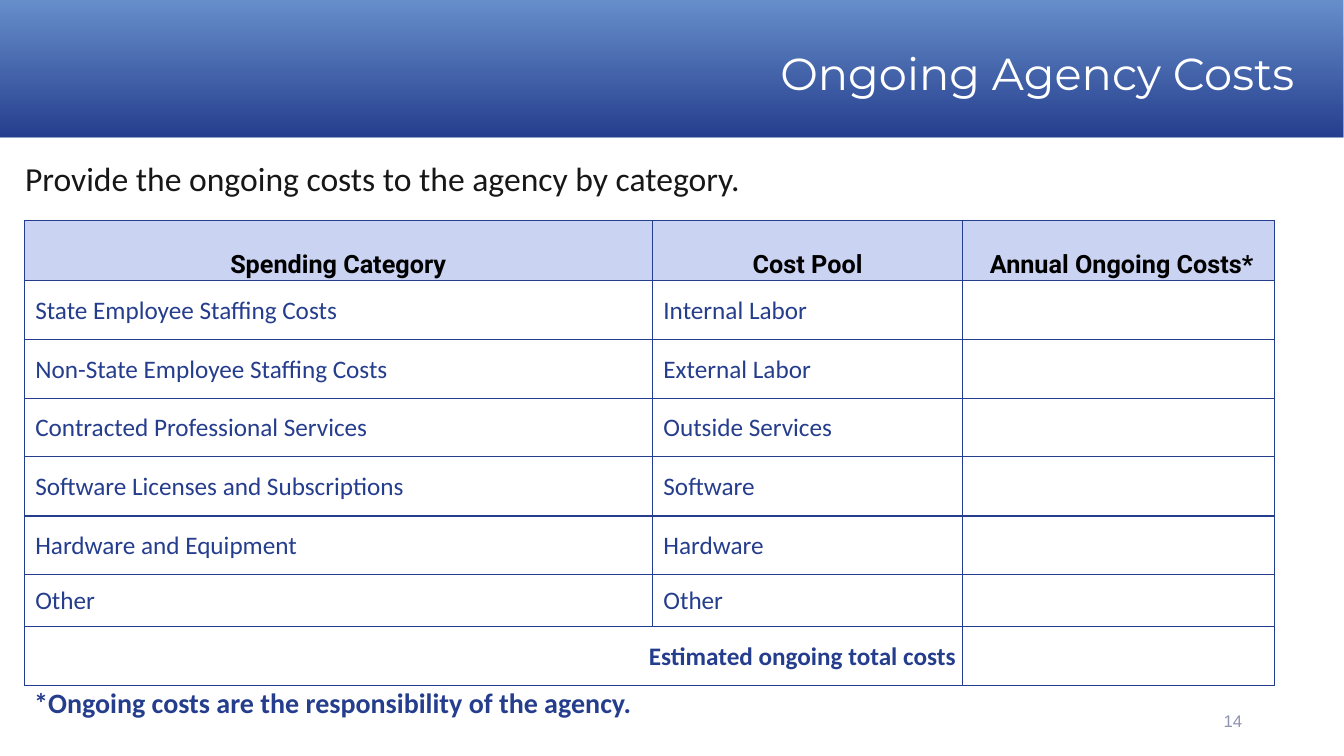
"""Build the Ongoing Agency Costs slide."""
from dataclasses import dataclass

from lxml.etree import SubElement
from pptx import Presentation
from pptx.dml.color import RGBColor as RGB
from pptx.enum.shapes import MSO_SHAPE as SHAPE
from pptx.enum.text import MSO_ANCHOR as ANCHOR, PP_ALIGN as ALIGN
from pptx.oxml.ns import qn
from pptx.slide import Slide
from pptx.table import _Cell as Cell
from pptx.text.text import TextFrame
from pptx.util import Inches, Pt

COLORS = {"sky": "6790CB", "white": "FFFFFF", "navy": "253D8D", "header": "CAD3F1",
          "black": "000000", "ink": "181717", "number": "8E92B3"}
BANNER_STOPS = [(0, "sky", 100), (100, "navy", 100), (100, "navy", 0)]
COL_WIDTHS = [6.23, 3.08, 3.09]
ROW_HEIGHTS = [0.59, 0.59, 0.58, 0.58, 0.59, 0.58, 0.52, 0.58]
HEADERS = ["Spending Category", "Cost Pool", "Annual Ongoing Costs*"]
CATEGORIES = [
    ("State Employee Staffing Costs", "Internal Labor"),
    ("Non-State Employee Staffing Costs", "External Labor"),
    ("Contracted Professional Services", "Outside Services"),
    ("Software Licenses and Subscriptions", "Software"),
    ("Hardware and Equipment", "Hardware"),
    ("Other", "Other"),
]


@dataclass(frozen=True)
class Style:
    font: str
    size: float
    color: str
    bold: bool = False
    align: ALIGN = ALIGN.LEFT
    spacing: float = 1.0


@dataclass(frozen=True)
class Label:
    text: str
    box: tuple[float, float, float, float]
    style: Style
    anchor: ANCHOR = ANCHOR.TOP


HEADER = Style("Roboto", 18, "black", True, ALIGN.CENTER)
BODY = Style("Calibri", 18, "navy")
TOTAL = Style("Calibri", 18, "navy", True, ALIGN.RIGHT)
LABELS = [
    Label("Ongoing Agency Costs", (7.35, 0.32, 5.59, 0.86),
          Style("Montserrat", 32, "white", align=ALIGN.RIGHT, spacing=0.9), ANCHOR.MIDDLE),
    Label("14", (9.42, 6.95, 3, 0.4),
          Style("Arial", 12, "number", align=ALIGN.RIGHT), ANCHOR.MIDDLE),
    Label("Provide the ongoing costs to the agency by category.", (0.15, 1.52, 12.4, 0.5),
          Style("Calibri", 24, "ink")),
    Label("*Ongoing costs are the responsibility of the agency.", (0.24, 6.75, 7.27, 0.44),
          Style("Calibri", 20, "navy", True)),
]


def write(tf: TextFrame, text: str, style: Style) -> None:
    p = tf.paragraphs[0]
    p.alignment, p.line_spacing = style.align, style.spacing
    r = p.add_run()
    r.text = text
    for name, value in {"name": style.font, "size": Pt(style.size), "bold": style.bold}.items():
        setattr(r.font, name, value)
    r.font.color.rgb = RGB.from_string(COLORS[style.color])


def add_color(parent, color: str, opacity: int) -> None:
    clr = SubElement(parent, qn("a:srgbClr"), val=COLORS[color])
    if opacity < 100:
        SubElement(clr, qn("a:alpha"), val=str(opacity * 1000))


def add_banner(s: Slide) -> None:
    sp = s.shapes.add_shape(SHAPE.RECTANGLE, 0, 0, Inches(13.33), Inches(1.37))
    sp.line.fill.background()
    sp.fill.gradient()
    sp.fill.gradient_angle = 270
    sp_pr = sp._element.spPr
    stops = sp_pr.find(f"{qn('a:gradFill')}/{qn('a:gsLst')}")
    for gs in list(stops):
        stops.remove(gs)
    for pos, color, opacity in BANNER_STOPS:
        add_color(SubElement(stops, qn("a:gs"), pos=str(pos * 1000)), color, opacity)
    sp.shadow.inherit = False
    shadow = SubElement(sp_pr.find(qn("a:effectLst")), qn("a:outerShdw"), blurRad=str(Pt(4)),
                        dist=str(Pt(3)), dir=str(45 * 60000), algn="tl", rotWithShape="0")
    add_color(shadow, "black", 40)


def add_label(s: Slide, label: Label) -> None:
    tf = s.shapes.add_textbox(*map(Inches, label.box)).text_frame
    tf.word_wrap = True
    tf.vertical_anchor = label.anchor
    write(tf, label.text, label.style)


def format_cell(cell: Cell, is_header: bool) -> None:
    formats = {"margin_left": Inches(0.01 if is_header else 0.11), "margin_top": Inches(0.01),
               "margin_right": Inches(0.01), "margin_bottom": 0,
               "vertical_anchor": ANCHOR.BOTTOM if is_header else ANCHOR.MIDDLE}
    for name, value in formats.items():
        setattr(cell, name, value)
    tc_pr = cell._tc.get_or_add_tcPr()
    for side in ("lnL", "lnR", "lnT", "lnB"):
        ln = SubElement(tc_pr, qn(f"a:{side}"), w=str(Pt(1)))
        add_color(SubElement(ln, qn("a:solidFill")), "navy", 100)
    if is_header:
        cell.fill.solid()
        cell.fill.fore_color.rgb = RGB.from_string(COLORS["header"])
    else:
        cell.fill.background()


def add_cost_table(s: Slide) -> None:
    rows = [HEADERS, *CATEGORIES]
    box = (0.24, 2.19, sum(COL_WIDTHS), sum(ROW_HEIGHTS))
    table = s.shapes.add_table(len(ROW_HEIGHTS), len(COL_WIDTHS), *map(Inches, box)).table
    table.first_row = table.horz_banding = False
    for col, width in zip(table.columns, COL_WIDTHS):
        col.width = Inches(width)
    for i, (row, height) in enumerate(zip(table.rows, ROW_HEIGHTS)):
        row.height = Inches(height)
        for cell in row.cells:
            format_cell(cell, i == 0)
    for i, texts in enumerate(rows):
        for j, text in enumerate(texts):
            write(table.cell(i, j).text_frame, text, BODY if i else HEADER)
    table.cell(0, 2).margin_left = Inches(0.07)
    last = len(ROW_HEIGHTS) - 1
    total = table.cell(last, 0)
    total.merge(table.cell(last, 1))
    total.margin_right = Inches(0.07)
    write(total.text_frame, "Estimated ongoing total costs", TOTAL)


def main() -> None:
    prs = Presentation()
    prs.slide_width, prs.slide_height = Inches(13.33), Inches(7.5)
    s = prs.slides.add_slide(prs.slide_layouts[6])
    add_banner(s)
    add_cost_table(s)
    for label in LABELS:
        add_label(s, label)
    prs.save("out.pptx")


if __name__ == "__main__":
    main()
